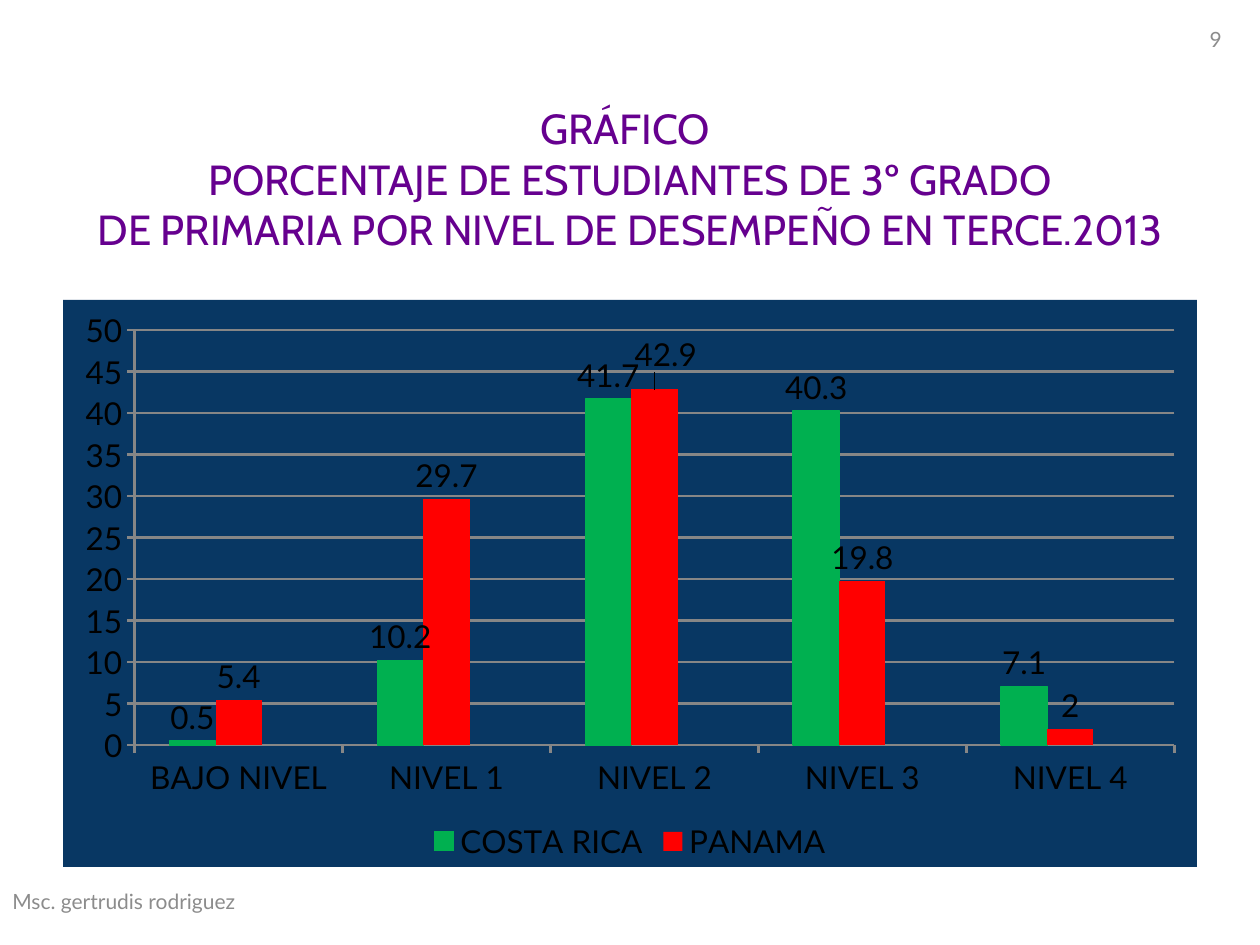
from dataclasses import dataclass
from typing import Optional

from lxml import etree
from pptx import Presentation
from pptx.chart.data import CategoryChartData
from pptx.dml.color import RGBColor
from pptx.enum import chart as charts, shapes, text
from pptx.oxml import ns
from pptx.util import Inches, Pt


@dataclass(frozen=True)
class Theme:
    title_font: str = "Cabin"
    body_font: str = "Lato"
    title_size: int = 24
    chart_size: int = 18
    note_size: int = 12
    title: str = "66008F"
    chart_text: str = "000000"
    note: str = "8C8C8C"
    grid: str = "868686"
    panel: str = "083763"


@dataclass(frozen=True)
class Series:
    name: str
    values: tuple[Optional[float], ...]
    color: str
    labelled: bool = True


@dataclass(frozen=True)
class Note:
    words: str
    shape: shapes.MSO_SHAPE
    left: float
    top: float
    width: float
    height: float
    align: text.PP_ALIGN


THEME = Theme()
TITLE = (
    "GRÁFICO \v"
    "PORCENTAJE DE ESTUDIANTES DE 3º GRADO\v"
    "DE PRIMARIA POR NIVEL DE DESEMPEÑO EN TERCE.2013"
)
LEVELS = ("BAJO NIVEL", "NIVEL 1", "NIVEL 2", "NIVEL 3", "NIVEL 4")
SERIES = (
    Series("COSTA RICA", (0.5, 10.2, 41.7, 40.3, 7.1), "00B050"),
    Series("PANAMA", (5.4, 29.7, 42.9, 19.8, 2), "FF0000"),
    Series("Series 3", (None,) * len(LEVELS), "0BD0D9", labelled=False),
)
NOTES = (
    Note("Msc. gertrudis rodriguez", shapes.MSO_SHAPE.RECTANGLE,
         0, 6.95, 3.17, 0.4, text.PP_ALIGN.LEFT),
    Note("9", shapes.MSO_SHAPE.ROUNDED_RECTANGLE,
         9.3, 0, 0.7, 0.62, text.PP_ALIGN.CENTER),
)


def style_font(font, name: str, size: int, color: str) -> None:
    font.name = name
    font.size = Pt(size)
    font.bold = False
    font.color.rgb = RGBColor.from_string(color)


def place(shape, left: float, top: float, width: float, height: float) -> None:
    shape.left, shape.top = Inches(left), Inches(top)
    shape.width, shape.height = Inches(width), Inches(height)


def add_title(page) -> None:
    title = page.shapes.title
    place(title, 0.5, 0.58, 9, 1.67)
    frame = title.text_frame
    frame.text = TITLE
    frame.word_wrap = True
    frame.auto_size = text.MSO_AUTO_SIZE.NONE
    frame.vertical_anchor = text.MSO_ANCHOR.MIDDLE
    para = frame.paragraphs[0]
    para.alignment = text.PP_ALIGN.CENTER
    style_font(para.font, THEME.title_font, THEME.title_size, THEME.title)


def add_note(page, note: Note) -> None:
    box = page.shapes.add_shape(
        note.shape, Inches(note.left), Inches(note.top),
        Inches(note.width), Inches(note.height))
    box.shadow.inherit = False
    box.fill.background()
    box.line.fill.background()
    frame = box.text_frame
    frame.word_wrap = True
    frame.vertical_anchor = text.MSO_ANCHOR.MIDDLE
    frame.text = note.words
    para = frame.paragraphs[0]
    para.alignment = note.align
    style_font(para.font, THEME.body_font, THEME.note_size, THEME.note)


def add_element(parent, tag: str, value: Optional[str] = None):
    child = etree.SubElement(parent, ns.qn(tag))
    if value is not None:
        child.set("val", value)
    return child


def fill_panel(chart) -> None:
    panel = etree.Element(ns.qn("c:spPr"))
    fill = add_element(panel, "a:solidFill")
    add_element(fill, "a:srgbClr", THEME.panel)
    chart._chartSpace.find(ns.qn("c:chart")).addnext(panel)


def hide_legend_entry(chart, index: int) -> None:
    entry = etree.Element(ns.qn("c:legendEntry"))
    add_element(entry, "c:idx", str(index))
    add_element(entry, "c:delete", "1")
    chart.legend._element.find(ns.qn("c:legendPos")).addnext(entry)


def shift_label(series, index: int, x: float, y: float) -> None:
    label = series.points[index].data_label
    label.position = charts.XL_LABEL_POSITION.OUTSIDE_END
    layout = etree.Element(ns.qn("c:layout"))
    manual = add_element(layout, "c:manualLayout")
    add_element(manual, "c:x", str(x))
    add_element(manual, "c:y", str(y))
    for entry in series._element.iter(ns.qn("c:dLbl")):
        entry.find(ns.qn("c:idx")).addnext(layout)


def style_line(line) -> None:
    line.color.rgb = RGBColor.from_string(THEME.grid)
    line.width = Pt(1.5)


def add_level_chart(page) -> None:
    data = CategoryChartData()
    data.categories = LEVELS
    for item in SERIES:
        data.add_series(item.name, item.values)
    chart = page.shapes.add_chart(
        charts.XL_CHART_TYPE.COLUMN_CLUSTERED,
        Inches(0.5), Inches(2.38), Inches(9), Inches(4.5), data).chart
    fill_panel(chart)
    style_font(chart.font, THEME.body_font, THEME.chart_size, THEME.chart_text)
    chart.has_title = False
    chart.has_legend = True
    chart.legend.position = charts.XL_LEGEND_POSITION.BOTTOM
    chart.legend.include_in_layout = False

    plot = chart.plots[0]
    plot.gap_width = 150
    plot.overlap = 0
    plot.vary_by_categories = False
    for index, (series, item) in enumerate(zip(plot.series, SERIES)):
        series.invert_if_negative = False
        series.format.fill.solid()
        series.format.fill.fore_color.rgb = RGBColor.from_string(item.color)
        if item.labelled:
            series.data_labels.show_value = True
            series.data_labels.position = charts.XL_LABEL_POSITION.OUTSIDE_END
        else:
            hide_legend_entry(chart, index)
    green = plot.series[0].format.line
    green.color.rgb = RGBColor.from_string(SERIES[0].color)
    green.width = Pt(0.75)
    shift_label(plot.series[1], 2, 0.01, -0.02)

    for axis in (chart.category_axis, chart.value_axis):
        axis.major_tick_mark = charts.XL_TICK_MARK.OUTSIDE
        axis.minor_tick_mark = charts.XL_TICK_MARK.NONE
        style_line(axis.format.line)
    scale = chart.value_axis
    scale.minimum_scale, scale.maximum_scale, scale.major_unit = 0, 50, 5
    scale.has_major_gridlines = True
    style_line(scale.major_gridlines.format.line)


def main() -> None:
    deck = Presentation()
    deck.slide_width, deck.slide_height = Inches(10), Inches(7.5)
    page = deck.slides.add_slide(deck.slide_layouts[5])
    add_title(page)
    add_level_chart(page)
    for note in NOTES:
        add_note(page, note)
    deck.save("out.pptx")


if __name__ == "__main__":
    main()
